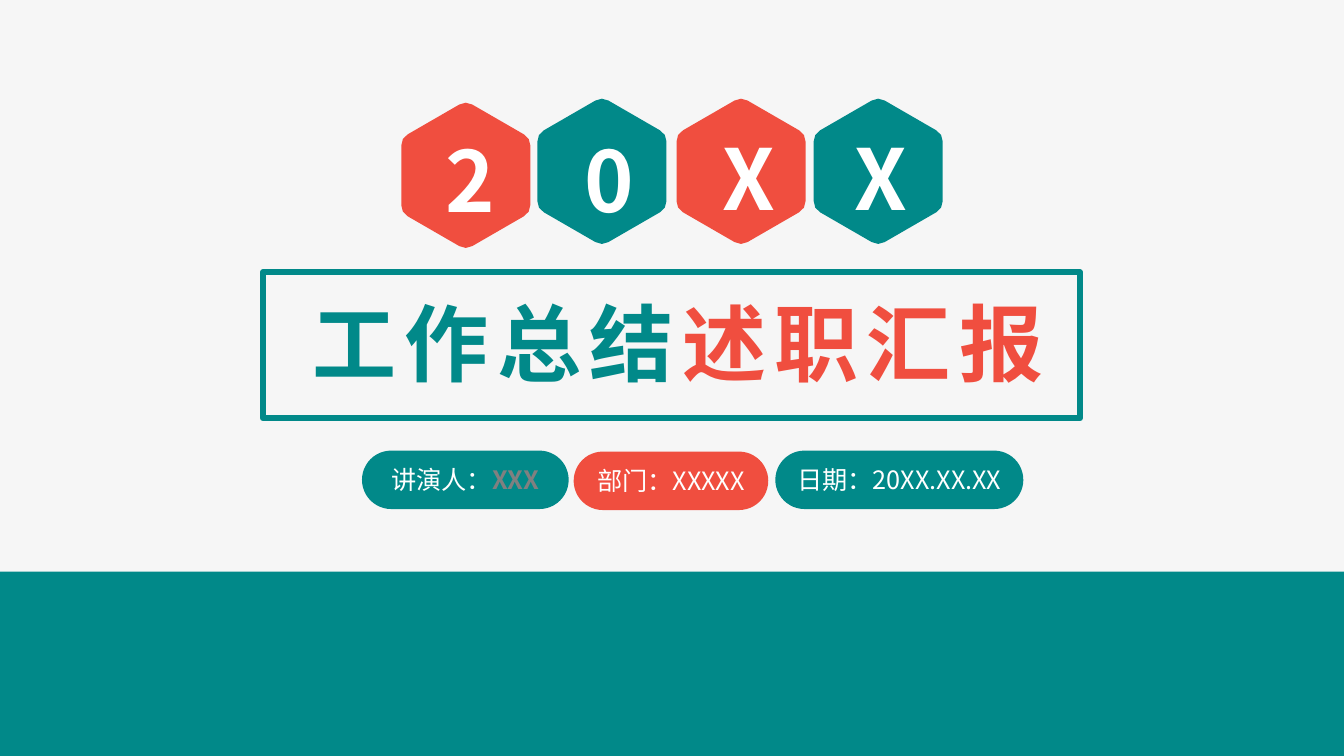
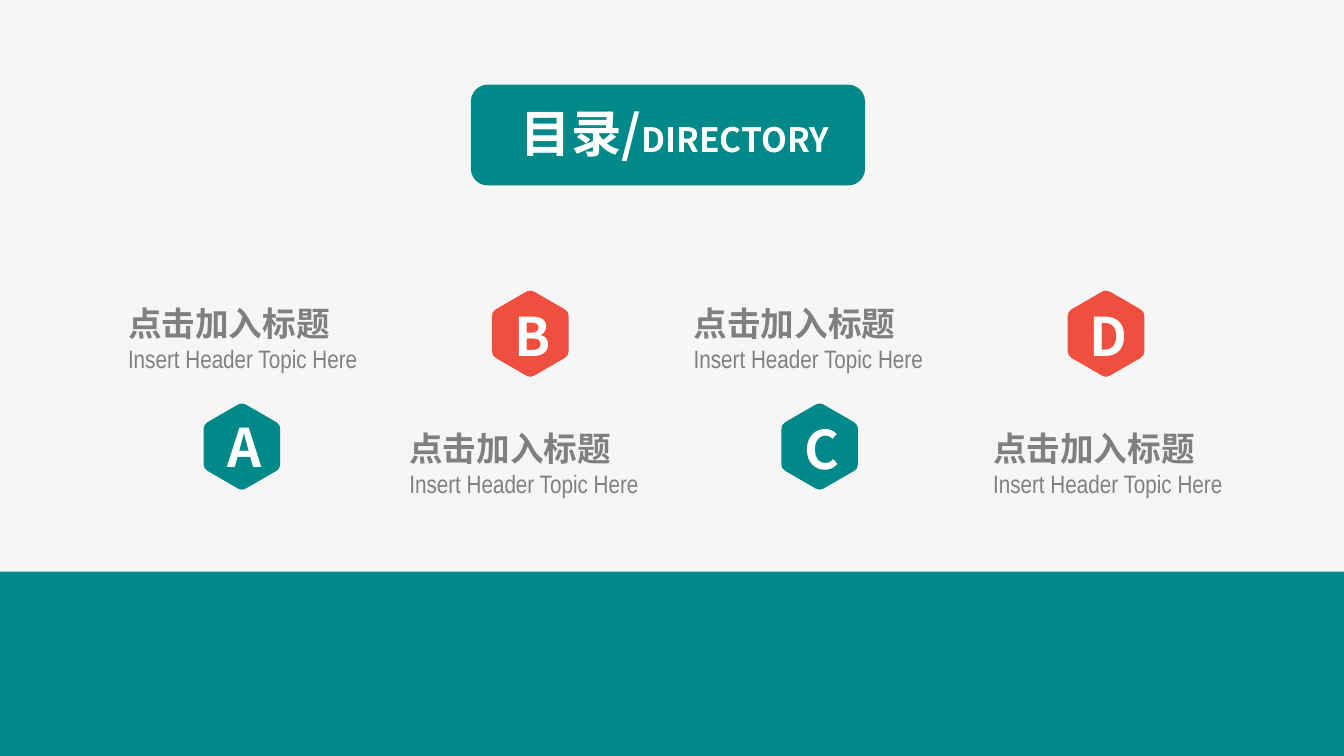
from itertools import cycle
from math import cos, radians, sin, sqrt

from lxml import etree
from pptx import Presentation
from pptx.dml.color import RGBColor
from pptx.enum.shapes import MSO_SHAPE
from pptx.enum.text import MSO_ANCHOR, MSO_AUTO_SIZE, PP_ALIGN
from pptx.oxml.ns import qn
from pptx.util import Inches, Pt

RECT, ROUND = MSO_SHAPE.RECTANGLE, MSO_SHAPE.ROUNDED_RECTANGLE
LEFT, CENTER = PP_ALIGN.LEFT, PP_ALIGN.CENTER
TOP, MIDDLE = MSO_ANCHOR.TOP, MSO_ANCHOR.MIDDLE
NO_FIT = MSO_AUTO_SIZE.NONE

TEAL = RGBColor(0x01, 0x89, 0x89)
RED = RGBColor(0xF0, 0x4E, 0x3F)
GRAY = RGBColor(0x80, 0x80, 0x80)
PALE = RGBColor(0xF6, 0xF6, 0xF6)
WHITE = RGBColor(0xFF, 0xFF, 0xFF)
SANS, NARROW = "Noto Sans CJK SC", "Arial Narrow"


def style(run, size=18, color=WHITE, bold=False, font=SANS, gap=0):
    """Format one run; gap is the letter spacing in points."""
    run.font.size = Pt(size)
    run.font.color.rgb = color
    run.font.bold = bold
    run.font.name = font
    props = run._r.get_or_add_rPr()
    etree.SubElement(props, qn("a:ea")).set("typeface", font)
    if gap:
        props.set("spc", str(gap * 100))


def write(shape, lines, align=CENTER, anchor=TOP, inset=(0.07, 0.04),
          wrap=True, **base):
    """Fill a shape with lines, each a list of (text, own format) runs."""
    frame = shape.text_frame
    frame.auto_size = NO_FIT
    frame.word_wrap = wrap
    frame.vertical_anchor = anchor
    frame.margin_left = frame.margin_right = Inches(inset[0])
    frame.margin_top = frame.margin_bottom = Inches(inset[1])
    for index, line in enumerate(lines):
        para = frame.add_paragraph() if index else frame.paragraphs[0]
        para.alignment = align
        for text, own in line:
            run = para.add_run()
            run.text = text
            style(run, **{**base, **own})


def place(shape, box):
    shape.left, shape.top, shape.width, shape.height = map(Inches, box)


def add_box(slide, box):
    return slide.shapes.add_textbox(*map(Inches, box))


def paint(shape, fill):
    shape.shadow.inherit = False
    shape.fill.solid()
    shape.fill.fore_color.rgb = fill
    shape.line.fill.background()


def add_block(slide, kind, box, fill):
    shape = slide.shapes.add_shape(kind, *map(Inches, box))
    paint(shape, fill)
    return shape


def add_frame(slide, box):
    frame = add_block(slide, RECT, box, TEAL)
    frame.fill.background()
    frame.line.color.rgb = TEAL
    frame.line.width = Pt(4.5)


def add_title(slide, box, runs, **form):
    """Place the title in front of the shapes drawn so far."""
    title = slide.shapes.title
    place(title, box)
    write(title, [runs], bold=True, **form)
    title.element.getparent().append(title.element)


def add_hex(slide, mid, width, fill):
    """Draw an upright hexagon with softened corners around its middle."""
    radius = width / sqrt(3)
    tips = [(mid[0] + radius * cos(radians(a)), mid[1] + radius * sin(radians(a)))
            for a in range(30, 390, 60)]
    cut = 0.1
    points = []
    for i, tip in enumerate(tips):
        prev, after = tips[i - 1], tips[(i + 1) % 6]
        for t in (0, 0.5, 1):
            back, ahead = cut * (1 - t) ** 2, cut * t ** 2
            points.append([Inches(c + back * (p - c) + ahead * (n - c))
                           for p, c, n in zip(prev, tip, after)])
    pen = slide.shapes.build_freeform(*points[0])
    pen.add_line_segments(points[1:], close=True)
    paint(pen.convert_to_shape(), fill)


def add_badge(slide, letter, mid, width, fill, label, size):
    """Draw a hexagon and its letter; label is the box of the letter."""
    add_hex(slide, mid, width, fill)
    write(add_box(slide, label), [[(letter, {})]], size=size, bold=True)


def add_slide(deck):
    slide = deck.slides.add_slide(deck.slide_layouts[5])
    add_block(slide, RECT, (0, 5.67, 13.33, 1.83), TEAL)
    return slide


def add_cover(deck):
    slide = add_slide(deck)
    badges = [
        ("2", 4.62, 1.74, 3.86, 1.23),
        ("0", 5.97, 1.7, 5.24, 1.23),
        ("X", 7.35, 1.7, 6.63, 1.21),
        ("X", 8.71, 1.7, 7.94, 1.21),
    ]
    for (letter, x, y, left, top), fill in zip(badges, cycle((RED, TEAL))):
        add_badge(slide, letter, (x, y), 1.28, fill, (left, top, 1.6, 1.09), 60)

    add_frame(slide, (2.61, 2.7, 8.1, 1.45))
    add_title(slide, (2.84, 2.84, 7.77, 1.11),
              [("工作总结", {"color": TEAL}), ("述职汇报", {"color": RED})],
              size=60, gap=6, inset=(0.1, 0.05))

    pills = [
        (3.59, 4.47, 2.05, [("讲演人：", {}), ("XXX", {"color": GRAY, "bold": True})]),
        (5.69, 4.48, 1.93, [("部门：XXXXX", {})]),
        (7.69, 4.47, 2.46, [("日期：20XX.XX.XX", {})]),
    ]
    for (left, top, width, runs), fill in zip(pills, cycle((TEAL, RED))):
        pill = add_block(slide, ROUND, (left, top, width, 0.58), fill)
        pill.adjustments[0] = 0.5
        write(pill, [runs], anchor=MIDDLE, inset=(0, 0), wrap=False)


def add_index(deck):
    slide = add_slide(deck)
    add_block(slide, ROUND, (4.67, 0.84, 3.91, 1), TEAL)
    add_title(slide, (4.33, 0.97, 4.73, 0.68),
              [("目录/", {}), ("DIRECTORY", {"size": 24})], size=36)

    topic = [[("点击加入标题", {"size": 24, "bold": True})],
             [("Insert Header Topic Here", {"font": NARROW})]]
    for left, top in zip((1.27, 4.06, 6.88, 9.85), cycle((2.96, 4.2))):
        write(add_box(slide, (left, top, 3, 0.81)), topic,
              align=LEFT, inset=(0, 0.05), color=GRAY)

    badges = [
        ("A", 2.4, 4.43, 4.07),
        ("B", 5.26, 3.31, 2.97),
        ("C", 8.13, 4.43, 4.09),
        ("D", 10.97, 3.31, 2.97),
    ]
    for (letter, x, y, top), fill in zip(badges, cycle((TEAL, RED))):
        add_badge(slide, letter, (x, y), 0.76, fill,
                  (x - 0.45, top, 0.95, 0.72), 38)


def main():
    deck = Presentation()
    deck.slide_width, deck.slide_height = Inches(13.33), Inches(7.5)
    back = deck.slide_master.background.fill
    back.solid()
    back.fore_color.rgb = PALE
    add_cover(deck)
    add_index(deck)
    deck.save("out.pptx")


if __name__ == "__main__":
    main()
